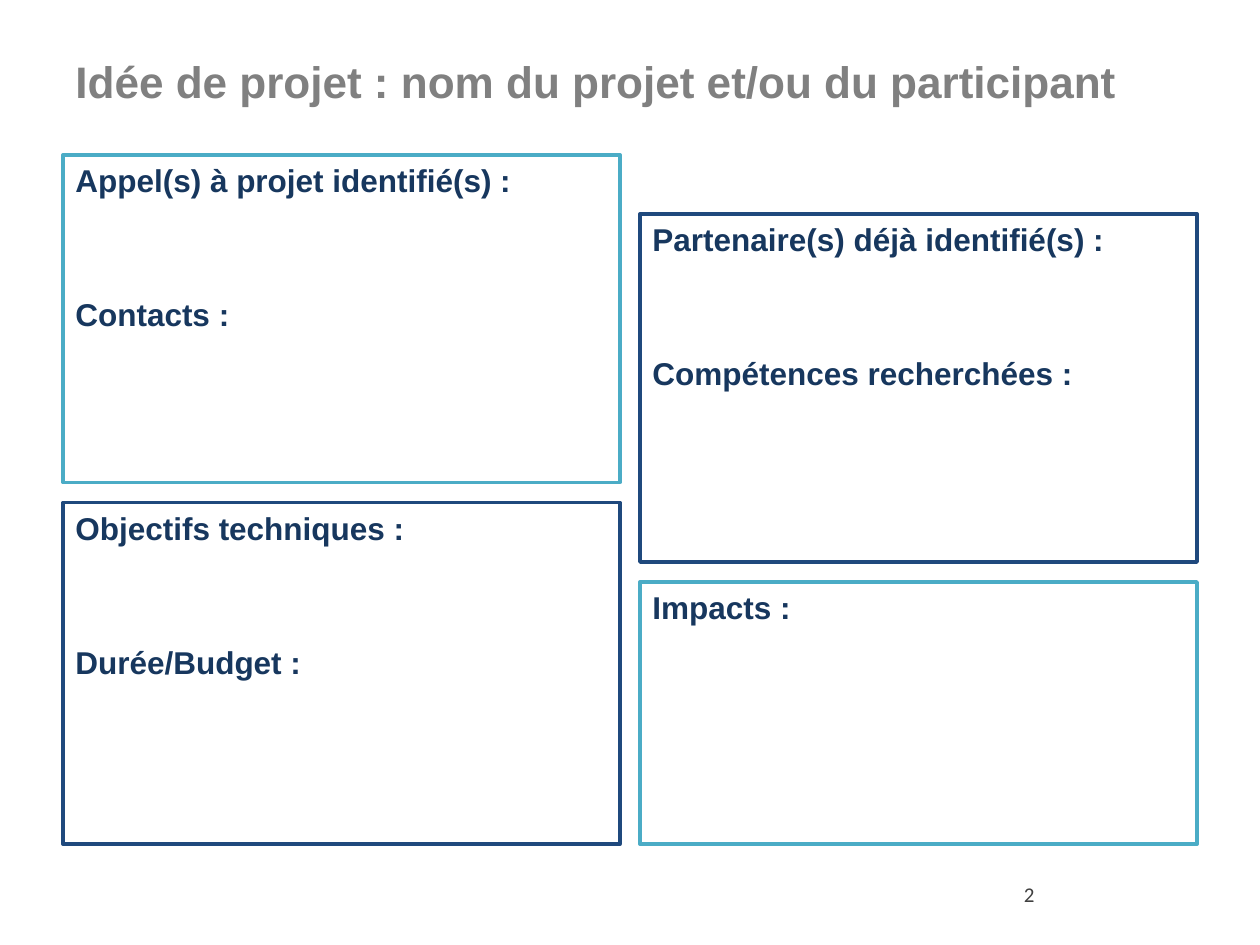
from dataclasses import dataclass

from pptx import Presentation
from pptx import util as u
from pptx.dml.color import RGBColor
from pptx.enum import shapes, text


@dataclass(frozen=True)
class Theme:
    grey: str = "808080"
    navy: str = "17375E"
    blue: str = "1F497D"
    teal: str = "4BACC6"
    white: str = "FFFFFF"
    dark: str = "404040"
    font: str = "Arial"
    number_font: str = "Calibri"
    title_size: float = 25.2
    label_size: float = 18
    number_size: float = 12


class Sheet:
    """Holds the theme and the current slide."""

    def __init__(self, slide, theme):
        self.s = slide
        self.theme = theme

    def run(self, p, words, size, color, font, bold=True):
        r = p.add_run()
        r.text = words
        r.font.size = u.Pt(size)
        r.font.name = font
        r.font.bold = bold
        r.font.color.rgb = RGBColor.from_string(color)

    def label(self, box, words, size, color, font, bold=True,
              align=text.PP_ALIGN.LEFT):
        sp = self.s.shapes.add_textbox(*map(u.Pt, box))
        tf = sp.text_frame
        tf.word_wrap = True
        tf.vertical_anchor = text.MSO_ANCHOR.MIDDLE
        p = tf.paragraphs[0]
        p.alignment = align
        self.run(p, words, size, color, font, bold)

    def panel(self, box, color, weight, headings, gap=55):
        t = self.theme
        sp = self.s.shapes.add_shape(shapes.MSO_SHAPE.RECTANGLE, *map(u.Pt, box))
        sp.shadow.inherit = False
        sp.fill.solid()
        sp.fill.fore_color.rgb = RGBColor.from_string(t.white)
        sp.line.color.rgb = RGBColor.from_string(color)
        sp.line.width = u.Pt(weight)
        tf = sp.text_frame
        tf.word_wrap = True
        tf.vertical_anchor = text.MSO_ANCHOR.TOP
        for i, words in enumerate(headings):
            p = tf.add_paragraph() if i else tf.paragraphs[0]
            p.alignment = text.PP_ALIGN.LEFT
            p.space_before = u.Pt(gap if i else 0)
            self.run(p, words, t.label_size, t.navy, t.font)


def main():
    prs = Presentation()
    prs.slide_width, prs.slide_height = u.Pt(720), u.Pt(540)
    t = Theme()
    sheet = Sheet(prs.slides.add_slide(prs.slide_layouts[6]), t)

    # Title
    sheet.label((36, 21.6, 635.8, 49.7),
                "Idée de projet : nom du projet et/ou du participant",
                t.title_size, t.grey, t.font)

    # Two columns of panels sharing one gap and one bottom edge
    left, width, gap, bottom = 36, 318.25, 11.5, 482.4
    columns = [
        (88.5, 187.2, [
            (t.teal, 2, ["Appel(s) à projet identifié(s) :", "Contacts :"]),
            (t.blue, 2, ["Objectifs techniques :", "Durée/Budget :"]),
        ]),
        (122.4, 198.7, [
            (t.blue, 2.25, ["Partenaire(s) déjà identifié(s) :",
                            "Compétences recherchées :"]),
            (t.teal, 2, ["Impacts :"]),
        ]),
    ]
    for col, (top, height, panels) in enumerate(columns):
        x = left + col * (width + gap)
        lower = top + height + gap
        rows = [(top, height), (lower, bottom - lower)]
        for (y, h), (color, weight, headings) in zip(rows, panels):
            sheet.panel((x, y, width, h), color, weight, headings)

    # Page number
    sheet.label((550, 496.8, 48.25, 28.8), "2", t.number_size, t.dark,
                t.number_font, bold=False, align=text.PP_ALIGN.RIGHT)

    prs.save("out.pptx")


if __name__ == "__main__":
    main()
